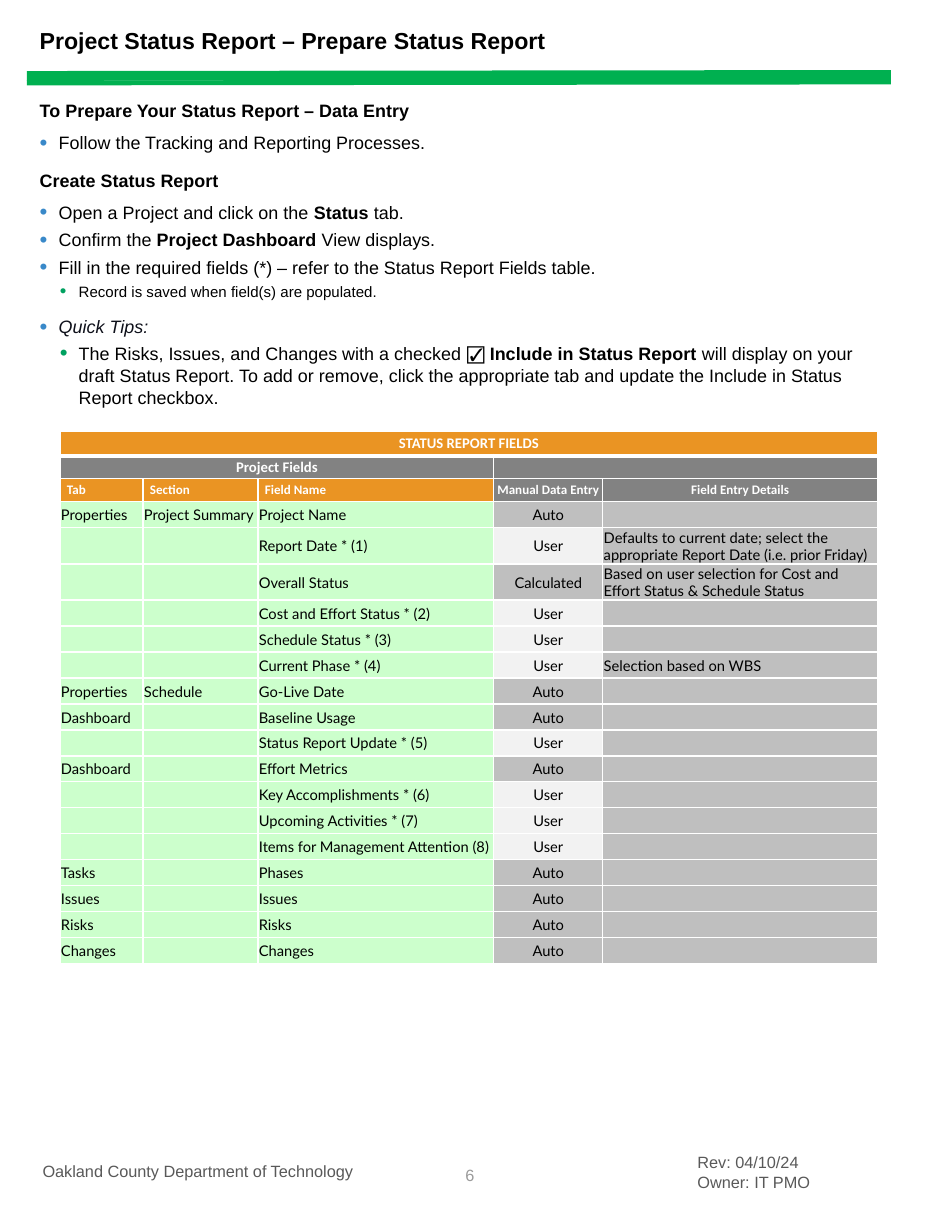
from lxml import etree
from pptx import Presentation
from pptx.dml.color import RGBColor
from pptx.enum.shapes import MSO_CONNECTOR
from pptx.enum.text import MSO_ANCHOR, MSO_AUTO_SIZE, PP_ALIGN
from pptx.oxml.ns import qn
from pptx.util import Emu, Inches, Pt

STRAIGHT = MSO_CONNECTOR.STRAIGHT
TOP, MIDDLE = MSO_ANCHOR.TOP, MSO_ANCHOR.MIDDLE
NO_FIT = MSO_AUTO_SIZE.NONE
LEFT, CENTER, RIGHT = PP_ALIGN.LEFT, PP_ALIGN.CENTER, PP_ALIGN.RIGHT

BLACK = RGBColor(0x00, 0x00, 0x00)
WHITE = RGBColor(0xFF, 0xFF, 0xFF)
INK = RGBColor(0x0E, 0x10, 0x1A)
RULE_GREEN = RGBColor(0x00, 0xB0, 0x50)
BULLET_BLUE = RGBColor(0x39, 0x89, 0xC9)
BULLET_GREEN = RGBColor(0x00, 0xA1, 0x60)
FOOTER_GRAY = RGBColor(0x59, 0x59, 0x59)
PAGE_GRAY = RGBColor(0x9B, 0x9B, 0x9B)
ORANGE = RGBColor(0xEA, 0x94, 0x23)
DARK_GRAY = RGBColor(0x82, 0x82, 0x82)
MID_GRAY = RGBColor(0xBF, 0xBF, 0xBF)
PALE_GRAY = RGBColor(0xF2, 0xF2, 0xF2)
PALE_GREEN = RGBColor(0xCC, 0xFF, 0xCC)

PX_PER_INCH = 117.4
INDENT = 19

# Bullet colour and outline level for each kind of body line
HEADING, SUBHEADING = (None, 0), (None, 1)
STEP, DETAIL = (BULLET_BLUE, 0), (BULLET_GREEN, 1)

# Kind, text (pieces between bars are bold), size, space before, space after
BODY_LINES = [
    (HEADING, "|To Prepare Your Status Report – Data Entry|", 11, 0, 3),
    (STEP, "Follow the Tracking and Reporting Processes.", 11, 3.1, 6),
    (SUBHEADING, "|Create Status Report|", 11, 3.1, 3),
    (STEP, "Open a Project and click on the |Status |tab.", 11, 3.1, 0),
    (STEP, "Confirm the |Project Dashboard| View displays.", 11, 3.1, 0),
    (STEP, "Fill in the required fields (*) – refer to the Status Report Fields table.", 11, 3.1, 0),
    (DETAIL, "Record is saved when field(s) are populated.", 9.2, 2.4, 6),
    (STEP, "Quick Tips:", 11, 3.1, 0),
    (DETAIL, "The Risks, Issues, and Changes with a checked |☑ Include in Status Report |"
             "will display on your draft Status Report. To add or remove, click the appropriate "
             "tab and update the Include in Status Report checkbox.", 11, 2.4, 0),
]

COLUMN_WIDTHS = [83, 115, 236, 109, 275]
COLUMN_HEADS = ["Tab", "Section", "Field Name", "Manual Data Entry", "Field Entry Details"]
FIELDS = [
    ("Properties", "Project Summary", "Project Name", "Auto", ""),
    ("", "", "Report Date * (1)", "User",
     "Defaults to current date; select the appropriate Report Date (i.e. prior Friday)"),
    ("", "", "Overall Status", "Calculated",
     "Based on user selection for Cost and Effort Status & Schedule Status"),
    ("", "", "Cost and Effort Status * (2)", "User", ""),
    ("", "", "Schedule Status * (3)", "User", ""),
    ("", "", "Current Phase * (4)", "User", "Selection based on WBS"),
    ("Properties", "Schedule", "Go-Live Date", "Auto", ""),
    ("Dashboard", "", "Baseline Usage", "Auto", ""),
    ("", "", "Status Report Update * (5)", "User", ""),
    ("Dashboard", "", "Effort Metrics", "Auto", ""),
    ("", "", "Key Accomplishments * (6)", "User", ""),
    ("", "", "Upcoming Activities * (7)", "User", ""),
    ("", "", "Items for Management Attention (8)", "User", ""),
    ("Tasks", "", "Phases", "Auto", ""),
    ("Issues", "", "Issues", "Auto", ""),
    ("Risks", "", "Risks", "Auto", ""),
    ("Changes", "", "Changes", "Auto", ""),
]


def px(length):
    return Emu(round(length * 914400 / PX_PER_INCH))


class ReportPage:
    """Holds the current slide and its style."""
    font = "Arial"

    def __init__(self, slide):
        self.slide = slide

    def style(self, paragraph, size, color, bold=False, font=None):
        paragraph.font.name = font or self.font
        paragraph.font.size = Pt(size)
        paragraph.font.color.rgb = color
        paragraph.font.bold = bold

    def place(self, shape, box, anchor):
        shape.left, shape.top, shape.width, shape.height = map(px, box)
        frame = shape.text_frame
        frame.word_wrap = True
        frame.auto_size = NO_FIT
        frame.vertical_anchor = anchor
        return frame

    def title(self, text, box):
        frame = self.place(self.slide.shapes.title, box, MIDDLE)
        frame.text = text
        frame.paragraphs[0].alignment = LEFT
        self.style(frame.paragraphs[0], 14.2, BLACK, True)

    def body(self, lines, box):
        frame = self.place(self.slide.placeholders[1], box, TOP)
        for i, (kind, text, size, before, after) in enumerate(lines):
            paragraph = frame.paragraphs[0] if i == 0 else frame.add_paragraph()
            bullet_color, paragraph.level = kind
            paragraph.line_spacing = 1.04
            paragraph.space_before, paragraph.space_after = Pt(before), Pt(after)
            self.bullet(paragraph, bullet_color)
            tip = text == "Quick Tips:"
            self.style(paragraph, size, INK if tip else BLACK)
            paragraph.font.italic = tip
            for n, piece in enumerate(text.split("|")):
                if piece:
                    run = paragraph.add_run()
                    run.text = piece
                    if n % 2:
                        run.font.bold = True

    def bullet(self, paragraph, color):
        props = paragraph._p.get_or_add_pPr()
        depth = paragraph.level + 1 if color else 0
        props.set("marL", str(px(INDENT * depth + depth // 2)))
        props.set("indent", str(px(-INDENT if color else 0)))
        if color is None:
            etree.SubElement(props, qn("a:buNone"))
            return
        bullet_color = etree.SubElement(props, qn("a:buClr"))
        etree.SubElement(bullet_color, qn("a:srgbClr"), val=str(color))
        etree.SubElement(props, qn("a:buSzPct"), val="125000")
        etree.SubElement(props, qn("a:buFont"), typeface=self.font)
        etree.SubElement(props, qn("a:buChar"), char="•")

    def note(self, lines, box, color=FOOTER_GRAY, align=LEFT, anchor=TOP):
        frame = self.place(self.slide.shapes.add_textbox(0, 0, 0, 0), box, anchor)
        for i, line in enumerate(lines):
            paragraph = frame.paragraphs[0] if i == 0 else frame.add_paragraph()
            paragraph.text = line
            paragraph.alignment = align
            self.style(paragraph, 10, color)

    def rule(self, start, end, weight):
        rule = self.slide.shapes.add_connector(STRAIGHT, *map(px, start + end))
        rule.line.color.rgb = RULE_GREEN
        rule.line.width = Pt(weight)
        etree.SubElement(rule._element.spPr, qn("a:effectLst"))

    def table(self, left, top, widths, heights):
        frame = self.slide.shapes.add_table(len(heights), len(widths), px(left), px(top),
                                            px(sum(widths)), px(sum(heights)))
        table = frame.table
        table.first_row = table.horz_banding = False
        for column, width in zip(table.columns, widths):
            column.width = px(width)
        for row, height in zip(table.rows, heights):
            row.height = px(height)
        return table

    def cell(self, cell, text, fill, size=9, color=WHITE, bold=True, font="Calibri",
             align=CENTER, insets=(0, 0, 0, 0), top=1, bottom=1):
        cell.margin_left, cell.margin_top, cell.margin_right, cell.margin_bottom = map(px, insets)
        cell.vertical_anchor = MIDDLE
        props = cell._tc.get_or_add_tcPr()
        for side, weight in (("L", 1), ("R", 1), ("T", top), ("B", bottom)):
            border = etree.SubElement(props, qn("a:ln" + side), w=str(Pt(weight)))
            paint = etree.SubElement(border, qn("a:solidFill"))
            etree.SubElement(paint, qn("a:srgbClr"), val=str(WHITE))
        cell.fill.solid()
        cell.fill.fore_color.rgb = fill
        paragraph = cell.text_frame.paragraphs[0]
        paragraph.alignment = align
        self.style(paragraph, size, color, bold, font)
        if text:
            paragraph.add_run().text = text
        else:
            etree.SubElement(paragraph._p, qn("a:endParaRPr"), sz=str(size * 100))


def main():
    deck = Presentation()
    deck.slide_width, deck.slide_height = Inches(8), Inches(10.5)
    page = ReportPage(deck.slides.add_slide(deck.slide_layouts[1]))

    # Heading and green double rule
    page.rule((27, 83), (891, 82), 3)
    page.rule((27, 76), (891, 75), 6)
    page.title("Project Status Report – Prepare Status Report", (28, 21, 863, 38))

    # Instructions
    page.body(BODY_LINES, (28, 93, 864, 330))

    # Table headings
    heights = [24, 23, 23] + [36 if len(field[4]) > 40 else 26 for field in FIELDS]
    table = page.table(60, 432, COLUMN_WIDTHS, heights)
    for col, head in enumerate(COLUMN_HEADS):
        page.cell(table.cell(0, col), "" if col else "STATUS REPORT FIELDS", ORANGE, bottom=3)
        page.cell(table.cell(1, col), "" if col else "Project Fields", DARK_GRAY, top=3)
        named = col < 3
        page.cell(table.cell(2, col), head, ORANGE if named else DARK_GRAY, size=8,
                  align=LEFT if named else CENTER, insets=(7 if named else 0, 0, 0, 0))
    table.cell(0, 0).merge(table.cell(0, 4))
    table.cell(1, 0).merge(table.cell(1, 2))
    table.cell(1, 3).merge(table.cell(1, 4))

    # Table fields
    for row, field in enumerate(FIELDS, start=3):
        entry_fill = PALE_GRAY if field[3] == "User" else MID_GRAY
        fills = [PALE_GREEN] * 3 + [entry_fill, MID_GRAY]
        for col, (text, fill) in enumerate(zip(field, fills)):
            page.cell(table.cell(row, col), text, fill, color=BLACK, bold=False, font="Lato",
                      align=CENTER if col == 3 else LEFT, insets=(1, 1, 1, 0))

    # Footer
    page.note(["Rev: 04/10/24", "Owner: IT PMO"], (686, 1147, 141, 52))
    page.note(["6"], (121, 1152, 365, 47), PAGE_GRAY, RIGHT, MIDDLE)
    page.note(["Oakland County Department of Technology"], (31, 1156, 387, 32))

    deck.save("out.pptx")


if __name__ == "__main__":
    main()
